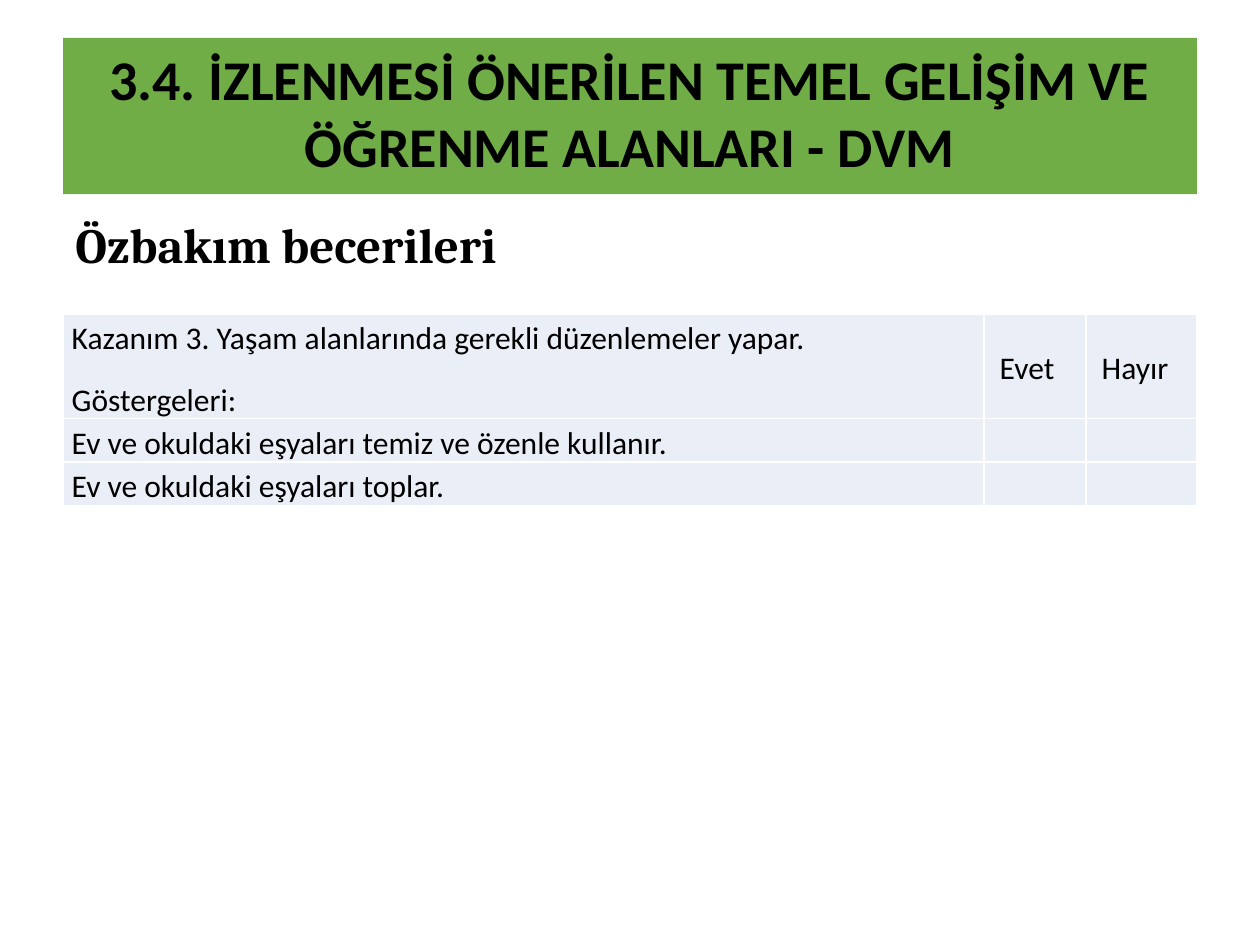
"""Build the slide on self-care skills with its outcome checklist."""
from lxml.etree import SubElement
from pptx import Presentation
from pptx.dml.color import RGBColor
from pptx.enum.text import MSO_ANCHOR, PP_ALIGN
from pptx.oxml.ns import qn
from pptx.util import Pt

LEFT, CONTENT_WIDTH = 36, 648
BLACK, WHITE, GREEN, PALE_BLUE = "000000", "FFFFFF", "70AD47", "EAEFF7"
COLUMN_WIDTHS = (526.3, 58.3, 63.4)
COLUMN_INSETS = (5, 9, 9)
ROW_HEIGHTS = (59, 24.8, 24.8)
CHECKLIST_ROWS = [
    [["Kazanım 3. Yaşam alanlarında gerekli düzenlemeler yapar.", "Göstergeleri:"], ["Evet"], ["Hayır"]],
    [["Ev ve okuldaki eşyaları temiz ve özenle kullanır."], [], []],
    [["Ev ve okuldaki eşyaları toplar."], [], []],
]


def color(value):
    return RGBColor.from_string(value)


def add_run(paragraph, text, size, font="Calibri", bold=False):
    run = paragraph.add_run()
    run.text = text
    run.font.size = Pt(size)
    run.font.name = font
    run.font.bold = bold
    run.font.color.rgb = color(BLACK)


presentation = Presentation()
presentation.slide_width, presentation.slide_height = Pt(720), Pt(540)
slide = presentation.slides.add_slide(presentation.slide_layouts[5])

heading = slide.shapes.title
heading.left, heading.top = Pt(LEFT), Pt(21.6)
heading.width, heading.height = Pt(CONTENT_WIDTH), Pt(89.3)
heading.fill.solid()
heading.fill.fore_color.rgb = color(GREEN)
heading.text_frame.vertical_anchor = MSO_ANCHOR.TOP
heading_line = heading.text_frame.paragraphs[0]
heading_line.alignment = PP_ALIGN.CENTER
add_run(heading_line, "3.4. İZLENMESİ ÖNERİLEN TEMEL GELİŞİM VE ÖĞRENME ALANLARI - DVM", 32, bold=True)

skill_area = slide.shapes.add_textbox(Pt(LEFT), Pt(112.3), Pt(437), Pt(77.8)).text_frame
skill_area.word_wrap = True
skill_area.vertical_anchor = MSO_ANCHOR.TOP
skill_area.margin_top, skill_area.margin_bottom = Pt(10.4), Pt(0)
add_run(skill_area.paragraphs[0], "Özbakım becerileri", 28, "Cambria", True)

checklist = slide.shapes.add_table(
    len(ROW_HEIGHTS), len(COLUMN_WIDTHS),
    Pt(LEFT), Pt(179.4), Pt(CONTENT_WIDTH), Pt(sum(ROW_HEIGHTS)),
).table
for column, width in zip(checklist.columns, COLUMN_WIDTHS):
    column.width = Pt(width)

for row, height, entries in zip(checklist.rows, ROW_HEIGHTS, CHECKLIST_ROWS):
    row.height = Pt(height)
    for cell, inset, lines in zip(row.cells, COLUMN_INSETS, entries):
        cell.margin_left, cell.margin_right = Pt(inset), Pt(5)
        cell.margin_top = cell.margin_bottom = Pt(0)
        cell.vertical_anchor = MSO_ANCHOR.MIDDLE
        for index, line in enumerate(lines):
            paragraph = cell.text_frame.add_paragraph() if index else cell.text_frame.paragraphs[0]
            paragraph.line_spacing = 1.15
            paragraph.space_after = Pt(10)
            add_run(paragraph, line, 18)
        properties = cell._tc.get_or_add_tcPr()
        for side in ("a:lnL", "a:lnR", "a:lnT", "a:lnB"):
            border = SubElement(properties, qn(side), w=str(Pt(1)))
            SubElement(SubElement(border, qn("a:solidFill")), qn("a:srgbClr"), val=WHITE)
        cell.fill.solid()
        cell.fill.fore_color.rgb = color(PALE_BLUE)

presentation.save("out.pptx")
